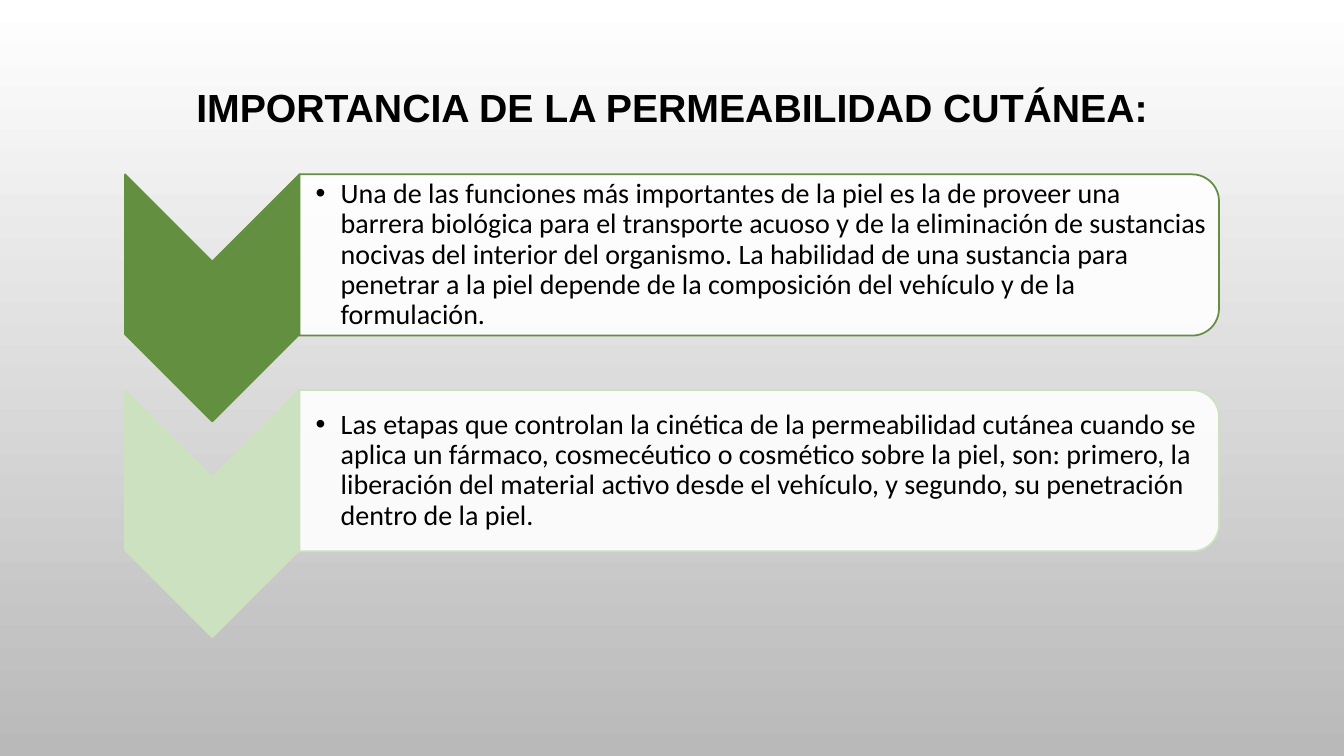
from dataclasses import dataclass

from lxml import etree
from pptx import Presentation
from pptx import util as u
from pptx.dml.color import RGBColor
from pptx.enum import shapes, text
from pptx.oxml.ns import qn

PX = u.Inches(1) // 100
FIRST_TOP, PITCH = 173, 214


@dataclass(frozen=True)
class Box:
    left: int
    top: int
    width: int
    height: int

    def emu(self) -> tuple[int, ...]:
        return tuple(v * PX for v in (self.left, self.top, self.width, self.height))

    def before_quarter_turn(self) -> "Box":
        """Box that covers this one once it is rotated by 90 degrees."""
        shift = (self.width - self.height) // 2
        return Box(self.left + shift, self.top - shift, self.height, self.width)


@dataclass(frozen=True)
class Stage:
    color: str
    words: str


STAGES = [
    Stage("638F40", "Una de las funciones más importantes de la piel es la de proveer una "
          "barrera biológica para el transporte acuoso y de la eliminación de sustancias "
          "nocivas del interior del organismo. La habilidad de una sustancia para penetrar "
          "a la piel depende de la composición del vehículo y de la formulación."),
    Stage("CBE1C0", "Las etapas que controlan la cinética de la permeabilidad cutánea cuando "
          "se aplica un fármaco, cosmecéutico o cosmético sobre la piel, son: primero, la "
          "liberación del material activo desde el vehículo, y segundo, su penetración "
          "dentro de la piel."),
]


def rgb(color: str) -> RGBColor:
    return RGBColor.from_string(color)


def apply(target, formats: dict) -> None:
    for name, value in formats.items():
        setattr(target, name, value)


def paint_background(page) -> None:
    fill = page.background.fill
    fill.gradient()
    fill.gradient_angle = 270
    for stop, (position, color) in zip(fill.gradient_stops, [(0, "FFFFFF"), (1, "B9B9B9")]):
        stop.position = position
        stop.color.rgb = rgb(color)


def write(para, words: str, font: str, size: int, bold: bool) -> None:
    span = para.add_run()
    span.text = words
    apply(span.font, {"name": font, "size": u.Pt(size), "bold": bold})
    span.font.color.rgb = rgb("000000")


def add_title(page, words: str) -> None:
    title = page.shapes.title
    apply(title, dict(zip(("left", "top", "width", "height"), Box(125, 68, 1083, 82).emu())))
    apply(title.text_frame, {"vertical_anchor": text.MSO_ANCHOR.MIDDLE, "word_wrap": True,
                             "auto_size": text.MSO_AUTO_SIZE.NONE})
    para = title.text_frame.paragraphs[0]
    apply(para, {"alignment": text.PP_ALIGN.CENTER, "line_spacing": 0.9})
    write(para, words, "Arial", 28, True)


def add_turned_shape(page, kind, box: Box, fill: str, line: str):
    shape = page.shapes.add_shape(kind, *box.before_quarter_turn().emu())
    shape.rotation = 90
    shape.shadow.inherit = False
    shape.fill.solid()
    shape.fill.fore_color.rgb = rgb(fill)
    shape.line.color.rgb = rgb(line)
    shape.line.width = u.Pt(1.25)
    return shape


def set_opacity(shape, percent: int) -> None:
    color = shape.fill._xPr.find(f"{qn('a:solidFill')}/{qn('a:srgbClr')}")
    etree.SubElement(color, qn("a:alpha"), val=str(percent * 1000))


def add_bullet_text(page, box: Box, words: str) -> None:
    frame = page.shapes.add_textbox(*box.emu()).text_frame
    apply(frame, {"word_wrap": True, "auto_size": text.MSO_AUTO_SIZE.NONE,
                  "vertical_anchor": text.MSO_ANCHOR.MIDDLE, "margin_left": 16 * PX,
                  "margin_top": PX, "margin_right": PX, "margin_bottom": PX})
    para = frame.paragraphs[0]
    apply(para, {"level": 1, "line_spacing": 0.9, "space_after": u.Pt(3),
                 "alignment": text.PP_ALIGN.LEFT})
    properties = para._p.get_or_add_pPr()
    properties.set("marL", str(25 * PX))
    properties.set("indent", str(-25 * PX))
    etree.SubElement(properties, qn("a:buFont"), typeface="Arial")
    etree.SubElement(properties, qn("a:buChar"), char="•")
    write(para, words, "Calibri", 20, False)


def add_stage(page, stage: Stage, top: int) -> None:
    kinds = shapes.MSO_SHAPE
    add_turned_shape(page, kinds.CHEVRON, Box(124, top, 173, 245), stage.color, stage.color)
    panel = add_turned_shape(page, kinds.ROUND_2_SAME_RECTANGLE, Box(297, top, 912, 160),
                             "FFFFFF", stage.color)
    set_opacity(panel, 90)
    add_bullet_text(page, Box(297, top + 8, 904, 144), stage.words)


def main() -> None:
    deck = Presentation()
    apply(deck, {"slide_width": 1333 * PX, "slide_height": 750 * PX})
    page = deck.slides.add_slide(deck.slide_layouts.get_by_name("Title Only"))
    paint_background(page)
    add_title(page, "IMPORTANCIA DE LA PERMEABILIDAD CUTÁNEA:")
    for row, stage in enumerate(STAGES):
        add_stage(page, stage, FIRST_TOP + row * PITCH)
    deck.save("out.pptx")


if __name__ == "__main__":
    main()
